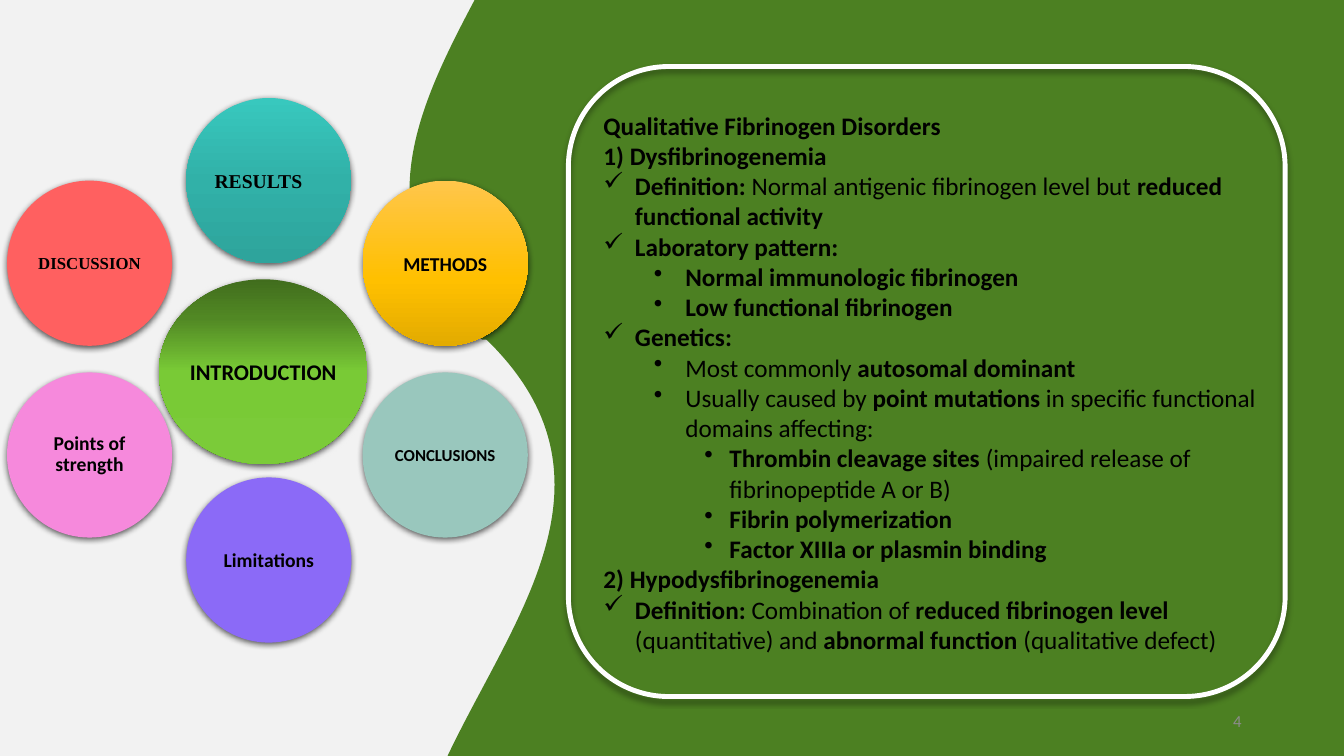
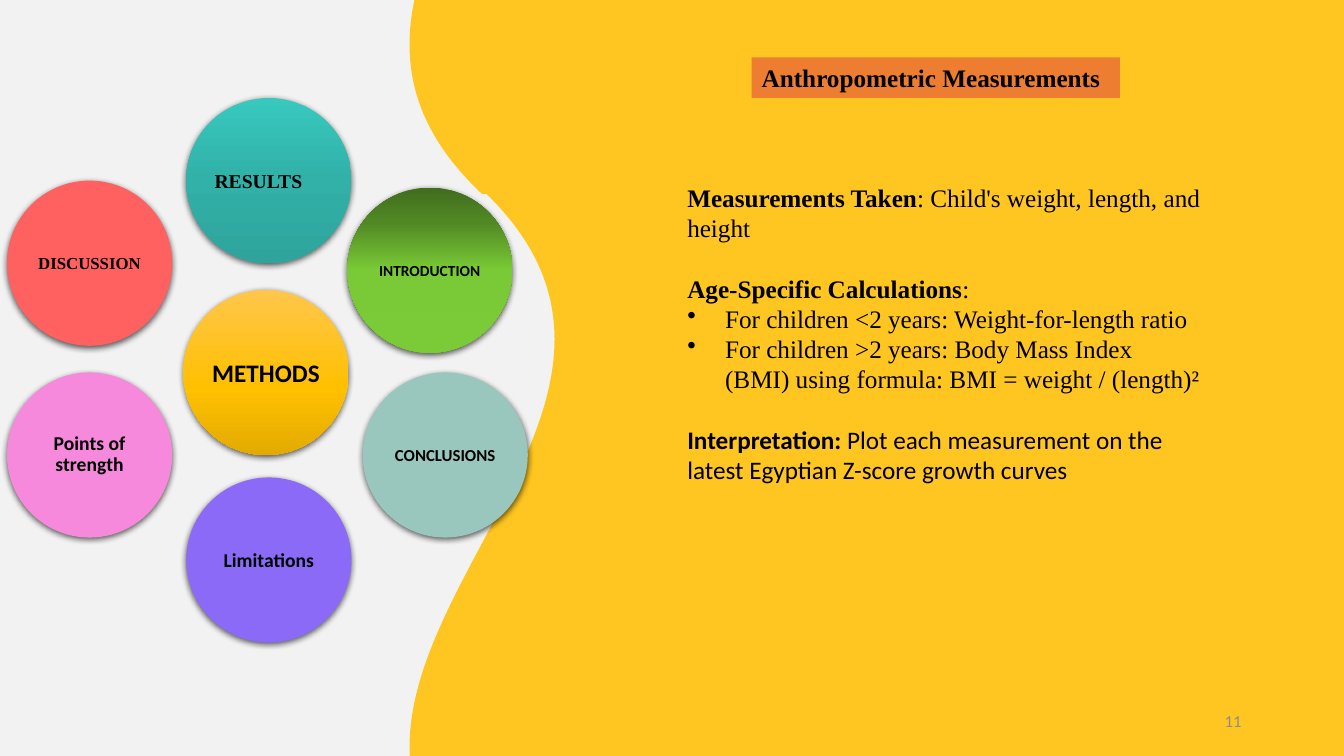
from lxml import etree
from pptx import Presentation
from pptx.dml.color import RGBColor
from pptx.enum.shapes import MSO_SHAPE
from pptx.enum.text import MSO_ANCHOR, PP_ALIGN
from pptx.oxml.ns import qn
from pptx.util import Pt

WAVE, OVAL = MSO_SHAPE.WAVE, MSO_SHAPE.OVAL
RECT, ROUND = MSO_SHAPE.RECTANGLE, MSO_SHAPE.ROUNDED_RECTANGLE
LEFT, CENTER, RIGHT = PP_ALIGN.LEFT, PP_ALIGN.CENTER, PP_ALIGN.RIGHT
TOP, MIDDLE = MSO_ANCHOR.TOP, MSO_ANCHOR.MIDDLE

SANS, SERIF = "Calibri", "Times New Roman"
BLACK, WHITE, PALE, GREY = "000000", "FFFFFF", "F2F2F2", "8C8C8C"
GREEN, AMBER, ORANGE = "4C8022", "FFC621", "ED7D31"
LEAF = [(0, "416D1D"), (21, "518824"), (50, "79CA36"), (100, "7BCB39")]
GOLD = [(0, "FFC64B"), (60, "FFC000"), (100, "E3AB00")]
TEAL = [(0, "38C8BE"), (50, "31B1A8"), (100, "2EA49C")]

DOT = 118
LINE = 21.6
PITCH = 502
DISC_SHADE = dict(alpha=63, blur=4.5, dist=1.5)
PANEL_SHADE = dict(alpha=40, blur=4, dist=3)

DISCS = [
    ("DISCUSSION", 5, 129, "FF6060", 12, SERIF, CENTER),
    ("CONCLUSIONS", 259, 266, "99C7BD", 12, SANS, CENTER),
    ("Limitations", 133, 341, "8B6AF7", 14, SANS, CENTER),
    ("Points of strength", 5, 266, "F689DC", 14, SANS, CENTER),
    ("RESULTS", 133, 70, TEAL, 14, SERIF, LEFT),
]

BULLETS = {
    "check": ("✓", 22.5, 22.5),
    "dot": ("•", 58.5, 22.5),
    "sub": ("•", 90, 18),
    "item": ("•", 27, 27),
}

DISORDERS = [
    ("", "*Qualitative Fibrinogen Disorders*"),
    ("", "*1) Dysfibrinogenemia*"),
    ("check", "*Definition:* Normal antigenic fibrinogen level but "
              "*reduced functional activity*"),
    ("check", "*Laboratory pattern:*"),
    ("dot", "*Normal immunologic fibrinogen*"),
    ("dot", "*Low functional fibrinogen*"),
    ("check", "*Genetics:*"),
    ("dot", "Most commonly *autosomal dominant*"),
    ("dot", "Usually caused by *point mutations* in specific functional "
            "domains affecting:"),
    ("sub", "*Thrombin cleavage sites* (impaired release of fibrinopeptide A or B)"),
    ("sub", "*Fibrin polymerization*"),
    ("sub", "*Factor XIIIa or plasmin binding*"),
    ("", "*2) Hypodysfibrinogenemia*"),
    ("check", "*Definition:* Combination of *reduced fibrinogen level* (quantitative) "
              "and *abnormal function* (qualitative defect)"),
]

MEASURES = [
    ("", "*Measurements Taken*: Child's weight, length, and height", SERIF, 0),
    ("", "*Age-Specific Calculations*:", SERIF, LINE),
    ("item", "For children <2 years: Weight-for-length ratio", SERIF, 0),
    ("item", "For children >2 years: Body Mass Index (BMI) using formula: "
             "BMI = weight / (length)²", SERIF, 0),
    ("", "*Interpretation:* Plot each measurement on the latest Egyptian "
         "Z-score growth curves", SANS, LINE),
]


def color(code):
    return RGBColor.from_string(code)


def put(item, **form):
    for key, value in form.items():
        setattr(item, key, value)


def add(base, tag, **form):
    node = etree.SubElement(base, qn(tag))
    for key, value in form.items():
        node.set(key, str(value))
    return node


class Deck:
    def __init__(self):
        self.file = Presentation()
        put(self.file, slide_width=Pt(960), slide_height=Pt(540))
        self.slide = None

    def page(self, tint, top, number):
        self.slide = self.file.slides.add_slide(self.file.slide_layouts[6])
        back = self.slide.background.fill
        back.solid()
        back.fore_color.rgb = color(PALE)
        for step in range(2):
            wave = self.shape(WAVE, 428, top + PITCH * step, 505, 780, tint)
            wave.rotation = 270
            wave.adjustments[0] = 0.069
        for disc in DISCS:
            self.disc(*disc)
        frame = self.box(678, 500, 216, 29, MIDDLE)
        self.para(frame.paragraphs[0], number, size=12, tint=GREY, align=RIGHT)

    def shape(self, kind, left, top, width, height, fill=None):
        form = self.slide.shapes.add_shape(
            kind, Pt(left), Pt(top), Pt(width), Pt(height))
        form.shadow.inherit = False
        form.line.fill.background()
        if isinstance(fill, list):
            self.blend(form, fill)
        elif fill:
            form.fill.solid()
            form.fill.fore_color.rgb = color(fill)
        else:
            form.fill.background()
        return form

    def blend(self, form, stops):
        form.fill.gradient()
        form.fill.gradient_angle = 270
        group = form._element.spPr.find(qn("a:gradFill")).find(qn("a:gsLst"))
        for old in list(group):
            group.remove(old)
        for spot, tint in stops:
            add(add(group, "a:gs", pos=spot * 1000), "a:srgbClr", val=tint)

    def shade(self, form, alpha, blur, dist):
        effect = form._element.spPr.find(qn("a:effectLst"))
        shadow = add(effect, "a:outerShdw", blurRad=Pt(blur), dist=Pt(dist),
                     dir=5400000, algn="ctr", rotWithShape=0)
        add(add(shadow, "a:srgbClr", val=BLACK), "a:alpha", val=alpha * 1000)

    def disc(self, text, left, top, fill, size, face=SANS, align=CENTER,
             width=DOT, height=DOT):
        form = self.shape(OVAL, left, top, width, height, fill)
        self.shade(form, **DISC_SHADE)
        pad = Pt(3 if align == LEFT else 0)
        frame = form.text_frame
        put(frame, word_wrap=True, vertical_anchor=MIDDLE, margin_left=pad,
            margin_right=pad, margin_top=0, margin_bottom=0)
        self.para(frame.paragraphs[0], f"*{text}*", size=size, face=face,
                  align=align, line_spacing=0.9 if " " in text else 1.0)

    def panel(self, left, top, width, height):
        form = self.shape(ROUND, left, top, width, height)
        form.adjustments[0] = 0.159
        form.line.color.rgb = color(WHITE)
        form.line.width = Pt(3.5)
        self.shade(form, **PANEL_SHADE)

    def label(self, text, left, top, width, height, fill):
        form = self.shape(RECT, left, top, width, height, fill)
        put(form.text_frame, word_wrap=True, vertical_anchor=MIDDLE)
        self.para(form.text_frame.paragraphs[0], f"*{text}*", face=SERIF)

    def box(self, left, top, width, height, anchor=TOP):
        frame = self.slide.shapes.add_textbox(
            Pt(left), Pt(top), Pt(width), Pt(height)).text_frame
        put(frame, word_wrap=True, vertical_anchor=anchor)
        return frame

    def body(self, rows, left, top, width, height):
        frame = self.box(left, top, width, height)
        for spot, (mark, text, *rest) in enumerate(rows):
            face, gap = rest or (SANS, 0)
            para = frame.add_paragraph() if spot else frame.paragraphs[0]
            self.para(para, text, mark, face=face, space_before=Pt(gap),
                      line_spacing=Pt(LINE))

    def para(self, para, text, mark="", size=18, face=SANS, tint=BLACK,
             align=LEFT, **form):
        put(para, alignment=align, **form)
        if mark:
            sign, left, hang = BULLETS[mark]
            props = para._p.get_or_add_pPr()
            props.set("marL", str(Pt(left)))
            props.set("indent", str(-Pt(hang)))
            add(props, "a:buChar", char=sign)
        for spot, part in enumerate(text.split("*")):
            if part:
                run = para.add_run()
                run.text = part
                put(run.font, size=Pt(size), name=face, bold=spot % 2 == 1)
                run.font.color.rgb = color(tint)


def main():
    deck = Deck()

    deck.page(GREEN, -400, "4")
    deck.disc("METHODS", 259, 129, GOLD, 14)
    deck.disc("INTRODUCTION", 113.5, 199.5, LEAF, 16, width=149, height=132)
    deck.panel(406, 47.5, 512, 450)
    deck.body(DISORDERS, 424, 75, 482, 422)

    deck.page(AMBER, -504, "11")
    deck.disc("METHODS", 131, 207, GOLD, 18)
    deck.disc("INTRODUCTION", 248, 134, LEAF, 11)
    deck.label("Anthropometric Measurements", 537, 41, 263, 29, ORANGE)
    deck.body(MEASURES, 483.84, 126.7, 381.6, 225)

    deck.file.save("out.pptx")


if __name__ == "__main__":
    main()
